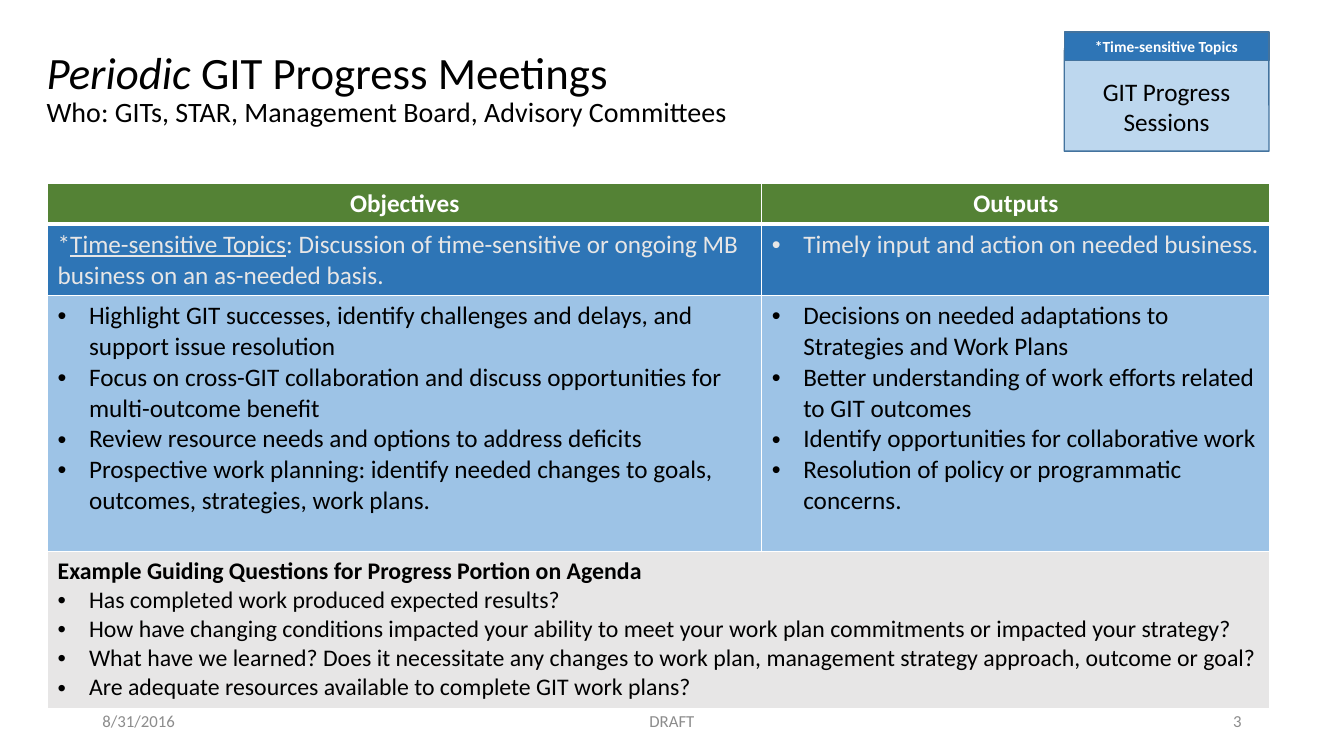
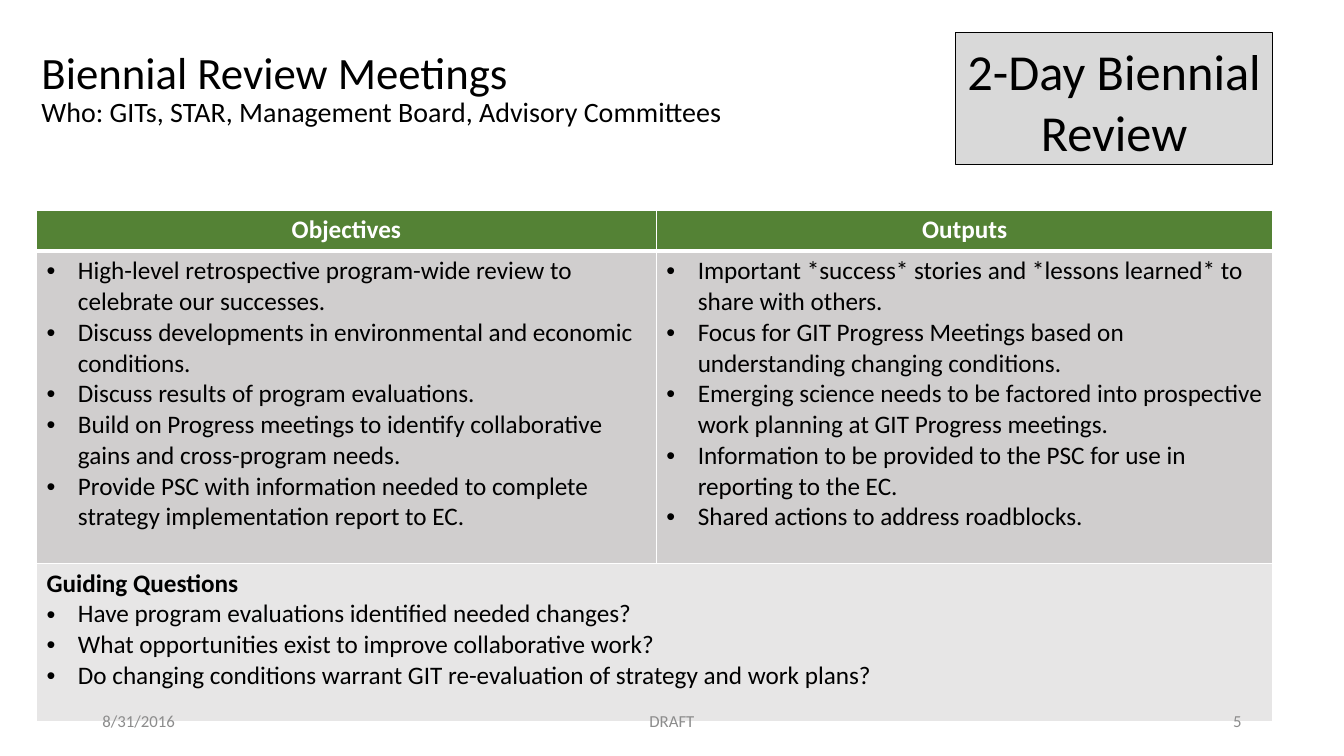
from dataclasses import dataclass

from lxml import etree
from pptx import Presentation
from pptx.dml.color import RGBColor
from pptx.enum.shapes import MSO_SHAPE
from pptx.enum.text import MSO_ANCHOR, MSO_AUTO_SIZE, PP_ALIGN
from pptx.oxml.ns import qn
from pptx.util import Cm, Pt

LEFT, CENTER, RIGHT = PP_ALIGN.LEFT, PP_ALIGN.CENTER, PP_ALIGN.RIGHT
MIDDLE = MSO_ANCHOR.MIDDLE
NO_AUTOFIT = MSO_AUTO_SIZE.NONE
RECTANGLE = MSO_SHAPE.RECTANGLE
ROUNDED_TOP = MSO_SHAPE.ROUND_2_SAME_RECTANGLE
TITLE_ONLY = 5


@dataclass(frozen=True)
class Theme:
    font: str = "Calibri"
    black: str = "000000"
    white: str = "FFFFFF"
    footer_gray: str = "8C8C8C"
    green: str = "548235"
    blue: str = "2E75B6"
    sky: str = "9DC3E6"
    pale_blue: str = "BDD7EE"
    blue_line: str = "43739E"
    light_gray: str = "E7E6E6"
    warm_gray: str = "D0CECE"
    badge_gray: str = "D9D9D9"
    title_size: int = 32
    subtitle_size: int = 20
    body_size: int = 18
    question_size: int = 17
    badge_size: int = 36
    banner_size: int = 11
    footer_size: int = 12


THEME = Theme()

# In table cells a plain string is a bullet; a list of (text, format) runs is an unbulleted paragraph.
HEADER = {
    "height": 1.03, "fill": THEME.green, "color": THEME.white, "alignment": CENTER,
    "cells": [[[("Objectives", {"bold": True})]], [[("Outputs", {"bold": True})]]],
}
SUBTITLE = "Who: GITs, STAR, Management Board, Advisory Committees"
DATE, STATUS = "8/31/2016", "DRAFT"

PROGRESS = {
    "title": [("Periodic", {"italic": True}), (" GIT Progress Meetings", {})],
    "title_left": 0.92,
    "number": "3",
    "table_at": (1.2, 4.62),
    "columns": (18, 12.8),
    "rows": [
        HEADER,
        {"height": 1.78, "fill": THEME.blue, "color": THEME.light_gray, "cells": [
            [[("*", {}), ("Time-sensitive Topics", {"underline": True}),
              (": Discussion of time-sensitive or ongoing MB business on an as-needed basis.", {})]],
            ["Timely input and action on needed business."],
        ]},
        {"height": 6.45, "fill": THEME.sky, "cells": [
            ["Highlight GIT successes, identify challenges and delays, and support issue resolution",
             "Focus on cross-GIT collaboration and discuss opportunities for multi-outcome benefit",
             "Review resource needs and options to address deficits",
             "Prospective work planning: identify needed changes to goals, outcomes, strategies, work plans."],
            ["Decisions on needed adaptations to Strategies and Work Plans",
             "Better understanding of work efforts related to GIT outcomes",
             "Identify opportunities for collaborative work",
             "Resolution of policy or programmatic concerns."],
        ]},
        {"height": 3.94, "fill": THEME.light_gray, "size": THEME.question_size, "cells": [
            [[("Example Guiding Questions for Progress Portion on Agenda", {"bold": True})],
             "Has completed work produced expected results?",
             "How have changing conditions impacted your ability to meet your work plan commitments "
             "or impacted your strategy?",
             "What have we learned? Does it necessitate any changes to work plan, management strategy "
             "approach, outcome or goal?",
             "Are adequate resources available to complete GIT work plans?"],
        ]},
    ],
}

REVIEW = {
    "title": [("Biennial Review Meetings", {})],
    "title_left": 0.79,
    "number": "5",
    "table_at": (0.92, 5.29),
    "columns": (15.62, 15.54),
    "rows": [
        HEADER,
        {"height": 7.87, "fill": THEME.warm_gray, "cells": [
            ["High-level retrospective program-wide review to celebrate our successes.",
             "Discuss developments in environmental and economic conditions.",
             "Discuss results of program evaluations.",
             "Build on Progress meetings to identify collaborative gains and cross-program needs.",
             "Provide PSC with information needed to complete strategy implementation report to EC."],
            ["Important *success* stories and *lessons learned* to share with others.",
             "Focus for GIT Progress Meetings based on understanding changing conditions.",
             "Emerging science needs to be factored into prospective work planning at GIT Progress meetings.",
             "Information to be provided to the PSC for use in reporting to the EC.",
             "Shared actions to address roadblocks."],
        ]},
        {"height": 3.99, "fill": THEME.light_gray, "cells": [
            [[("Guiding Questions", {"bold": True})],
             "Have program evaluations identified needed changes?",
             "What opportunities exist to improve collaborative work?",
             "Do changing conditions warrant GIT re-evaluation of strategy and work plans?"],
        ]},
    ],
}


def set_attributes(target, values):
    for name, value in values.items():
        setattr(target, name, value)


def set_fill(target, color):
    target.fill.solid()
    target.fill.fore_color.rgb = RGBColor.from_string(color)


def write_runs(paragraph, runs, size, color=THEME.black, alignment=LEFT):
    paragraph.alignment = alignment
    for text, format_values in runs:
        run = paragraph.add_run()
        run.text = text
        set_attributes(run.font, {"name": THEME.font, "size": Pt(size), "bold": False, **format_values})
        run.font.color.rgb = RGBColor.from_string(color)


def add_bullet(paragraph, indent=0.79):
    properties = paragraph._p.get_or_add_pPr()
    properties.set("marL", str(Cm(indent)))
    properties.set("indent", str(-Cm(indent)))
    etree.SubElement(properties, qn("a:buFont"), typeface="Arial")
    etree.SubElement(properties, qn("a:buChar"), char="•")


def add_borders(cell, bottom_width):
    """Draw white cell edges; call before filling, as XML order requires."""
    properties = cell._tc.get_or_add_tcPr()
    for edge, width in (("lnL", 1), ("lnR", 1), ("lnT", 1), ("lnB", bottom_width)):
        line = etree.SubElement(properties, qn(f"a:{edge}"), w=str(Pt(width)))
        fill = etree.SubElement(line, qn("a:solidFill"))
        etree.SubElement(fill, qn("a:srgbClr"), val=THEME.white)


def write_cell(cell, paragraphs, row):
    frame = cell.text_frame
    for index, content in enumerate(paragraphs):
        paragraph = frame.add_paragraph() if index else frame.paragraphs[0]
        is_bullet = isinstance(content, str)
        runs = [(content, {})] if is_bullet else content
        write_runs(paragraph, runs, row.get("size", THEME.body_size),
                   row.get("color", THEME.black), row.get("alignment", LEFT))
        if is_bullet:
            add_bullet(paragraph)


def add_agenda_table(slide, content):
    rows, columns = content["rows"], content["columns"]
    left, top = content["table_at"]
    height = sum(row["height"] for row in rows)
    table = slide.shapes.add_table(len(rows), len(columns), Cm(left), Cm(top),
                                   Cm(sum(columns)), Cm(height)).table
    table.horz_banding = False
    for column, width in zip(table.columns, columns):
        column.width = Cm(width)
    for index, row in enumerate(rows):
        table.rows[index].height = Cm(row["height"])
        for cell in table.rows[index].cells:
            add_borders(cell, 3 if row is HEADER else 1)
            set_fill(cell, row["fill"])
        if len(row["cells"]) == 1:
            table.cell(index, 0).merge(table.cell(index, len(columns) - 1))
        for column_index, paragraphs in enumerate(row["cells"]):
            write_cell(table.cell(index, column_index), paragraphs, row)


def add_title(slide, content):
    title = slide.shapes.title
    set_attributes(title, {"left": Cm(content["title_left"]), "top": Cm(0.81),
                           "width": Cm(21.5), "height": Cm(2.9)})
    frame = title.text_frame
    set_attributes(frame, {"auto_size": NO_AUTOFIT, "vertical_anchor": MIDDLE, "word_wrap": True})
    write_runs(frame.paragraphs[0], content["title"], THEME.title_size)
    write_runs(frame.add_paragraph(), [(SUBTITLE, {})], THEME.subtitle_size)
    for paragraph in frame.paragraphs:
        set_attributes(paragraph, {"line_spacing": 0.9, "space_before": Pt(0)})


def add_footer(slide, number):
    for text, left, width, alignment in ((DATE, 2.33, 7.62, LEFT), (STATUS, 11.22, 11.43, CENTER),
                                         (number, 23.92, 7.62, RIGHT)):
        frame = slide.shapes.add_textbox(Cm(left), Cm(17.65), Cm(width), Cm(1.01)).text_frame
        set_attributes(frame, {"word_wrap": True, "vertical_anchor": MIDDLE})
        write_runs(frame.paragraphs[0], [(text, {})], THEME.footer_size, THEME.footer_gray, alignment)


def add_label(shapes, kind, box, text, fill, line, line_width, size,
              color=THEME.black, bold=False, top_margin=0.13):
    shape = shapes.add_shape(kind, *map(Cm, box))
    shape.shadow.inherit = False
    set_fill(shape, fill)
    shape.line.color.rgb = RGBColor.from_string(line)
    shape.line.width = Pt(line_width)
    set_attributes(shape.text_frame, {"word_wrap": True, "vertical_anchor": MIDDLE,
                                      "margin_top": Cm(top_margin), "margin_bottom": Cm(0)})
    write_runs(shape.text_frame.paragraphs[0], [(text, {"bold": bold})], size, color, CENTER)


def add_progress_badge(slide):
    left, top, width, banner_height = 26.82, 0.81, 5.16, 0.71
    shapes = slide.shapes.add_group_shape().shapes
    add_label(shapes, ROUNDED_TOP, (left, top, width, 3), "GIT Progress Sessions",
              THEME.pale_blue, THEME.blue_line, 1, THEME.body_size, top_margin=0.6)
    add_label(shapes, RECTANGLE, (left, top, width, banner_height), "*Time-sensitive Topics",
              THEME.blue, THEME.blue_line, 1, THEME.banner_size, THEME.white, True, 0)


def add_review_badge(slide):
    add_label(slide.shapes, RECTANGLE, (24.08, 0.81, 8, 3.33), "2-Day Biennial Review",
              THEME.badge_gray, THEME.black, 0.75, THEME.badge_size)


def main():
    presentation = Presentation()
    set_attributes(presentation, {"slide_width": Cm(33.87), "slide_height": Cm(19.05)})
    for content, add_badge in ((PROGRESS, add_progress_badge), (REVIEW, add_review_badge)):
        slide = presentation.slides.add_slide(presentation.slide_layouts[TITLE_ONLY])
        add_title(slide, content)
        add_agenda_table(slide, content)
        add_badge(slide)
        add_footer(slide, content["number"])
    presentation.save("out.pptx")


if __name__ == "__main__":
    main()
